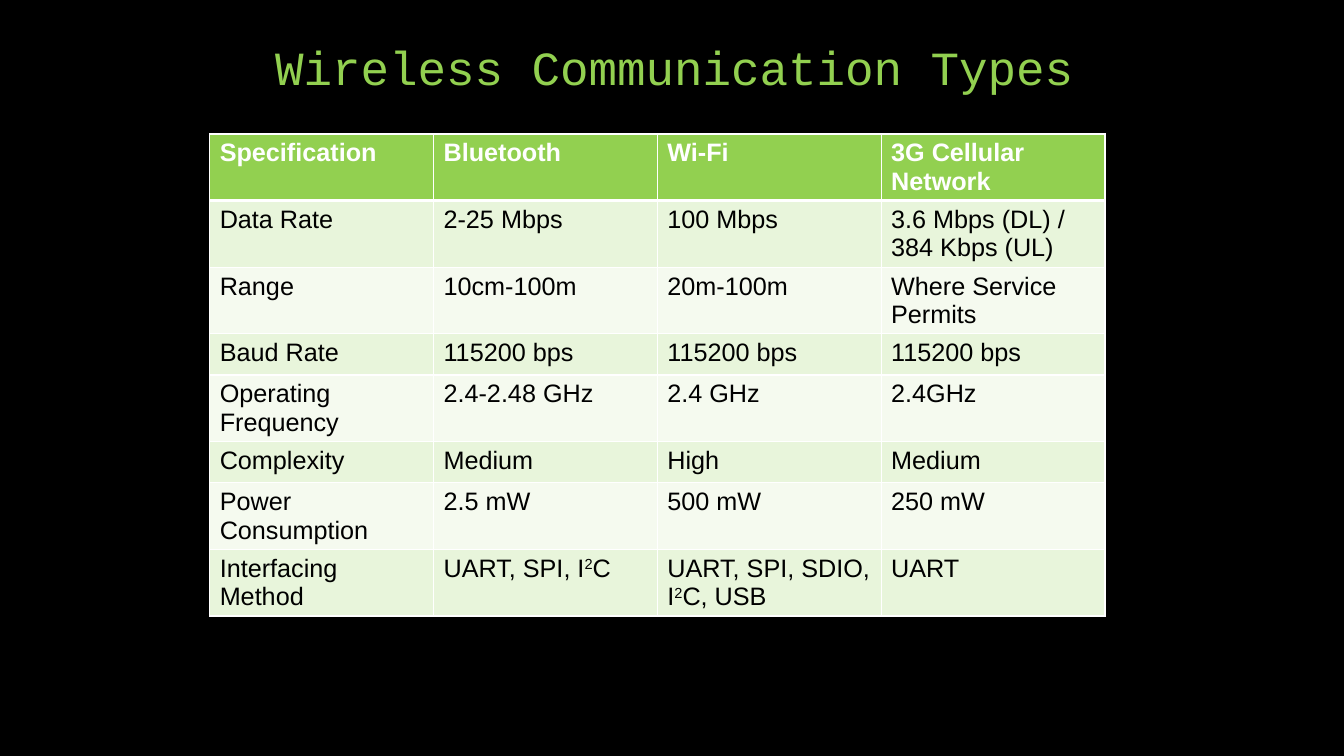
from pptx import Presentation
from pptx.dml.color import RGBColor
from pptx.enum.text import MSO_ANCHOR, PP_ALIGN
from pptx.oxml.ns import qn
from pptx.util import Inches, Pt
from lxml import etree

CENTER = PP_ALIGN.CENTER
BOTTOM = MSO_ANCHOR.BOTTOM
TITLE_ONLY = 5

BLACK, WHITE, GREEN = "000000", "FFFFFF", "92D050"
BANDS = ("E8F5DB", "F5FAEF")
SUPERSCRIPT_TWO = "²"

SPECIFICATIONS = [
    ("Specification", "Bluetooth", "Wi-Fi", "3G Cellular Network"),
    ("Data Rate", "2-25 Mbps", "100 Mbps", "3.6 Mbps (DL) / 384 Kbps (UL)"),
    ("Range", "10cm-100m", "20m-100m", "Where Service Permits"),
    ("Baud Rate", "115200 bps", "115200 bps", "115200 bps"),
    ("Operating Frequency", "2.4-2.48 GHz", "2.4 GHz", "2.4GHz"),
    ("Complexity", "Medium", "High", "Medium"),
    ("Power Consumption", "2.5 mW", "500 mW", "250 mW"),
    ("Interfacing Method", "UART, SPI, I²C", "UART, SPI, SDIO, I²C, USB", "UART"),
]


def rgb(color):
    return RGBColor.from_string(color)


def add_run(paragraph, text, color, **font_format):
    run = paragraph.add_run()
    run.text = text
    run.font.color.rgb = rgb(color)
    for attribute, value in font_format.items():
        setattr(run.font, attribute, value)
    return run


def set_title(slide, text):
    title = slide.shapes.title
    place = {"left": 1.69, "top": -0.25, "width": 10, "height": 1.25}
    for attribute, length in place.items():
        setattr(title, attribute, Inches(length))
    title.text_frame.vertical_anchor = BOTTOM
    title.text_frame.word_wrap = True
    paragraph = title.text_frame.paragraphs[0]
    paragraph.alignment = CENTER
    paragraph.line_spacing = 0.9
    add_run(paragraph, text, GREEN, name="Courier New", size=Pt(34))


def set_borders(cell, widths):
    properties = cell._tc.get_or_add_tcPr()
    for side, points in widths.items():
        line = etree.SubElement(properties, qn(f"a:ln{side}"), w=str(Pt(points)))
        fill = etree.SubElement(line, qn("a:solidFill"))
        etree.SubElement(fill, qn("a:srgbClr"), val=WHITE)


def write_cell(cell, text, color, bold):
    paragraph = cell.text_frame.paragraphs[0]
    font_format = {"name": "Arial", "size": Pt(18), "bold": bold}
    before, exponent, after = text.partition(SUPERSCRIPT_TWO)
    add_run(paragraph, before, color, **font_format)
    if exponent:
        raised = add_run(paragraph, "2", color, **font_format)
        raised._r.get_or_add_rPr().set("baseline", "30000")
        add_run(paragraph, after, color, **font_format)


def add_specification_table(slide, rows):
    column_count = len(rows[0])
    column_width, row_height = Inches(2.22), Inches(0.41)
    table = slide.shapes.add_table(
        len(rows), column_count, Inches(2.08), Inches(1.33),
        column_width * column_count, row_height * len(rows),
    ).table
    for row_index, texts in enumerate(rows):
        is_header = row_index == 0
        fill = GREEN if is_header else BANDS[(row_index - 1) % 2]
        widths = {
            "L": 1,
            "R": 1,
            "T": 3 if row_index == 1 else 1,
            "B": 3 if is_header else 1,
        }
        for column_index, text in enumerate(texts):
            cell = table.cell(row_index, column_index)
            set_borders(cell, widths)
            cell.fill.solid()
            cell.fill.fore_color.rgb = rgb(fill)
            write_cell(cell, text, WHITE if is_header else BLACK, is_header)


def main():
    presentation = Presentation()
    presentation.slide_width = Inches(13.33)
    presentation.slide_height = Inches(7.5)
    slide = presentation.slides.add_slide(presentation.slide_layouts[TITLE_ONLY])
    slide.background.fill.solid()
    slide.background.fill.fore_color.rgb = rgb(BLACK)
    set_title(slide, "Wireless Communication Types")
    add_specification_table(slide, SPECIFICATIONS)
    presentation.save("out.pptx")


if __name__ == "__main__":
    main()
